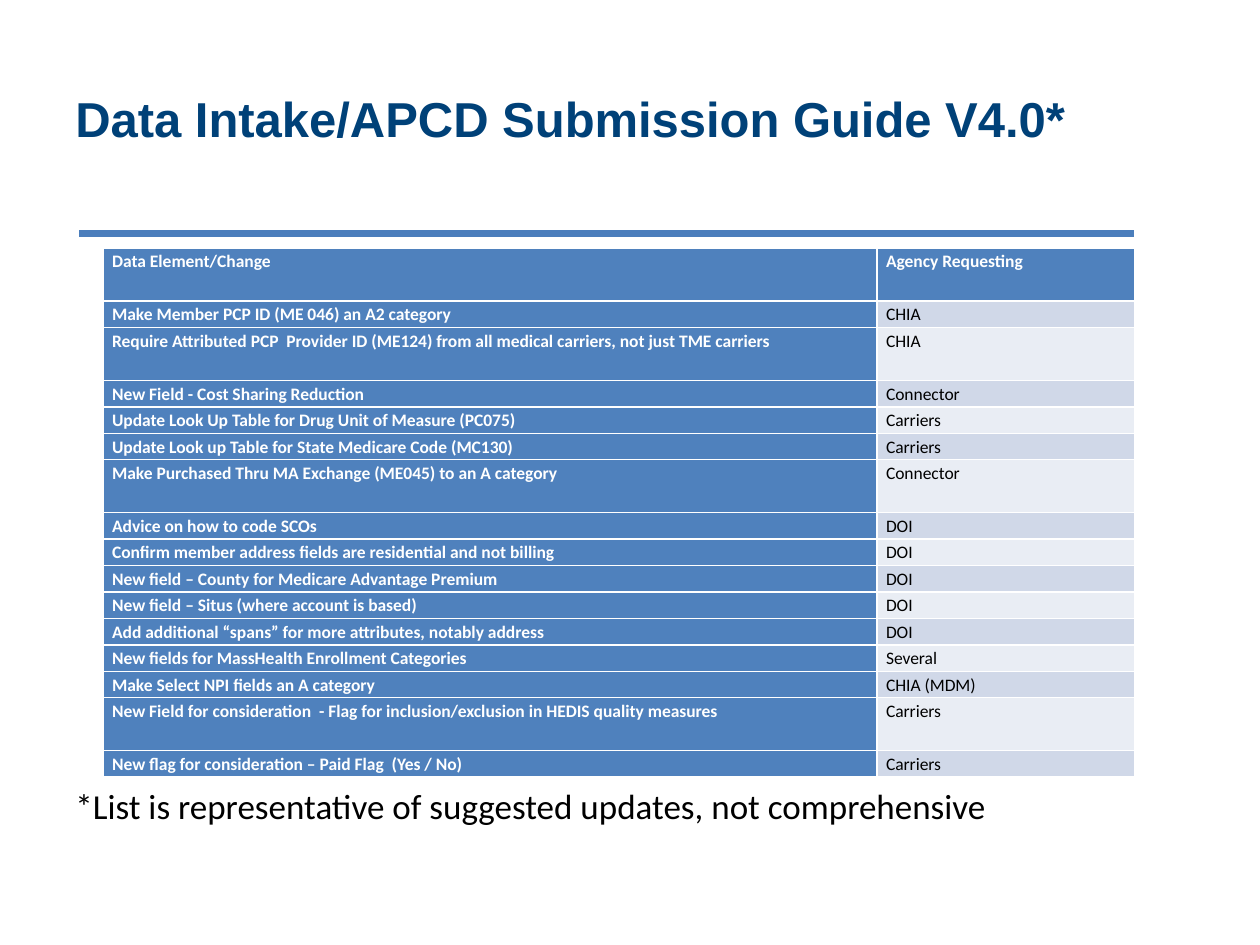
from typing import NamedTuple

from lxml.etree import SubElement
from pptx import Presentation
from pptx.dml.color import RGBColor
from pptx.enum.shapes import MSO_CONNECTOR
from pptx.enum.text import MSO_ANCHOR
from pptx.oxml.ns import qn
from pptx.util import Inches, Pt

SLIDE_WIDTH, SLIDE_HEIGHT = 10, 7.5
TEXT_LEFT, TEXT_WIDTH = 0.05 * SLIDE_WIDTH, 0.85 * SLIDE_WIDTH
TABLE_LEFT, TABLE_TOP, TABLE_WIDTH = 0.82, 1.97, 8.19
COLUMN_SHARES = (0.75, 0.25)
LINE_HEIGHT = 0.21

WHITE, BLACK = "FFFFFF", "000000"
BLUE, RULE_BLUE, NAVY = "4F81BD", "4B7EBC", "004178"
BANDS = ("D0D8E8", "E9EDF4")


class Request(NamedTuple):
    change: str
    agency: str
    lines: int = 1


class TextStyle(NamedTuple):
    size: float
    color: str
    bold: bool = False
    font: str = "Calibri"


HEADER = Request("Data Element/Change", "Agency Requesting", 2)
REQUESTS = (
    Request("Make Member PCP ID (ME 046) an A2 category", "CHIA"),
    Request("Require Attributed PCP  Provider ID (ME124) from all medical carriers, "
            "not just TME carriers", "CHIA", 2),
    Request("New Field - Cost Sharing Reduction", "Connector"),
    Request("Update Look Up Table for Drug Unit of Measure (PC075)", "Carriers"),
    Request("Update Look up Table for State Medicare Code (MC130)", "Carriers"),
    Request("Make Purchased Thru MA Exchange (ME045) to an A category", "Connector", 2),
    Request("Advice on how to code SCOs", "DOI"),
    Request("Confirm member address fields are residential and not billing", "DOI"),
    Request("New field – County for Medicare Advantage Premium", "DOI"),
    Request("New field – Situs (where account is based)", "DOI"),
    Request("Add additional “spans” for more attributes, notably address", "DOI"),
    Request("New fields for MassHealth Enrollment Categories", "Several"),
    Request("Make Select NPI fields an A category", "CHIA (MDM)"),
    Request("New Field for consideration  - Flag for inclusion/exclusion in HEDIS "
            "quality measures", "Carriers", 2),
    Request("New flag for consideration – Paid Flag  (Yes / No)", "Carriers"),
)
HEADING = TextStyle(10, WHITE, bold=True)
BODY = TextStyle(10, BLACK)


def rgb(color: str) -> RGBColor:
    return RGBColor.from_string(color)


def style_paragraph(paragraph, style: TextStyle) -> None:
    font = paragraph.font
    font.name, font.size, font.bold = style.font, Pt(style.size), style.bold
    font.color.rgb = rgb(style.color)


def add_text(page, text: str, top: float, height: float, style: TextStyle):
    box = page.shapes.add_textbox(
        Inches(TEXT_LEFT), Inches(top), Inches(TEXT_WIDTH), Inches(height))
    frame = box.text_frame
    frame.word_wrap = True
    frame.text = text
    style_paragraph(frame.paragraphs[0], style)
    return frame


def add_rule(page, left: float, right: float, y: float) -> None:
    rule = page.shapes.add_connector(
        MSO_CONNECTOR.STRAIGHT, Inches(left), Inches(y), Inches(right), Inches(y))
    rule.line.color.rgb = rgb(RULE_BLUE)
    rule.line.width = Pt(4)
    SubElement(rule._element.spPr, qn("a:effectLst"))


def fill_cell(cell, text: str, fill: str, style: TextStyle) -> None:
    cell.fill.solid()
    cell.fill.fore_color.rgb = rgb(fill)
    cell.margin_left = cell.margin_right = Inches(0.07)
    cell.margin_top = cell.margin_bottom = 0
    cell.text = text
    paragraph = cell.text_frame.paragraphs[0]
    paragraph.line_spacing = 1.15
    style_paragraph(paragraph, style)


def add_request_table(page) -> None:
    """Keep the default table style, which supplies the white cell borders."""
    rows = (HEADER, *REQUESTS)
    height = LINE_HEIGHT * sum(row.lines for row in rows)
    table = page.shapes.add_table(
        len(rows), len(COLUMN_SHARES), Inches(TABLE_LEFT), Inches(TABLE_TOP),
        Inches(TABLE_WIDTH), Inches(height)).table
    table.first_col = True
    for column, share in zip(table.columns, COLUMN_SHARES):
        column.width = Inches(TABLE_WIDTH * share)
    for index, row in enumerate(rows):
        table.rows[index].height = Inches(LINE_HEIGHT * row.lines)
        fill_cell(table.cell(index, 0), row.change, BLUE, HEADING)
        if row is HEADER:
            fill_cell(table.cell(index, 1), row.agency, BLUE, HEADING)
        else:
            fill_cell(table.cell(index, 1), row.agency, BANDS[(index - 1) % 2], BODY)


def main() -> None:
    deck = Presentation()
    deck.slide_width, deck.slide_height = Inches(SLIDE_WIDTH), Inches(SLIDE_HEIGHT)
    page = deck.slides.add_slide(deck.slide_layouts[6])

    add_rule(page, 0.63, 9, 1.85)
    title = add_text(page, "Data Intake/APCD Submission Guide V4.0*", 0.61, 1.11,
                     TextStyle(28, NAVY, bold=True, font="Arial"))
    title.vertical_anchor = MSO_ANCHOR.MIDDLE
    title.margin_bottom = Inches(0.5)
    add_request_table(page)
    add_text(page, "*List is representative of suggested updates, not comprehensive",
             6.18, 0.44, TextStyle(20, BLACK))

    deck.save("out.pptx")


if __name__ == "__main__":
    main()
